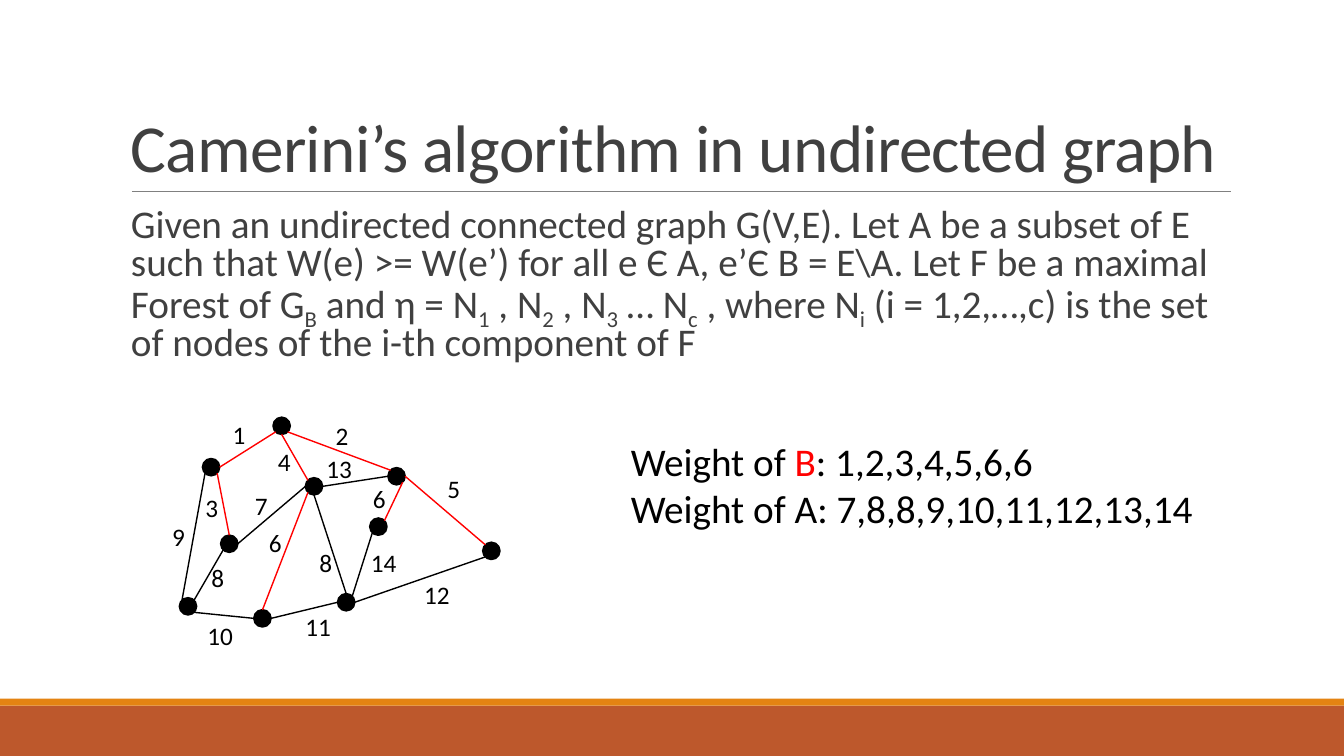
"""Build a slide on Camerini's algorithm with a weighted undirected graph."""
from math import cos, radians, sin

from lxml.etree import SubElement
from pptx import Presentation
from pptx.dml.color import RGBColor
from pptx.enum.shapes import MSO_CONNECTOR, MSO_SHAPE
from pptx.enum.text import MSO_ANCHOR
from pptx.oxml.ns import qn
from pptx.util import Pt

BLACK = RGBColor(0x00, 0x00, 0x00)
RED = RGBColor(0xFF, 0x00, 0x00)
DARK = RGBColor(0x40, 0x40, 0x40)
GRAY = RGBColor(0x80, 0x80, 0x80)
ORANGE = RGBColor(0xE4, 0x83, 0x12)
RUST = RGBColor(0xBD, 0x58, 0x2C)
FONT = "Calibri"

TITLE = "Camerini’s algorithm in undirected graph"
BODY = [
    ("Given an undirected connected graph G(V,E). Let A be a subset of E such that "
     "W(e) >= W(e’) for all e Є A, e’Є B = E\\A. Let F be a maximal Forest of G", "B"),
    (" and η = N", "1"),
    (" , N", "2"),
    (" , N", "3"),
    (" … N", "c"),
    (" , where N", "i"),
    (" (i = 1,2,…,c) is the set of nodes of the i-th component of F", ""),
]
WEIGHTS = [
    [("Weight of ", BLACK), ("B", RED), (": 1,2,3,4,5,6,6", BLACK)],
    [("Weight of A: 7,8,8,9,10,11,12,13,14", BLACK)],
]

NODE_SIZE = 12.2
NODES = {
    "a": (144.7, 327.6), "b": (195.1, 298.1), "c": (218.2, 341.3),
    "d": (157.7, 382.3), "e": (264.2, 370.1), "f": (181.4, 435.6),
    "g": (277.2, 334.1), "h": (128.2, 427), "i": (241.2, 424.1),
    "j": (344.9, 387.4),
}
ANGLES = {"E": 0, "SE": 45, "S": 90, "SW": 135, "W": 180, "NW": 225, "N": 270, "NE": 315}
EDGES = [
    ("b", "SW", "a", "E", RED, "1", (159.1, 295.9)),
    ("b", "S", "c", "NW", RED, "4", (191.5, 315.4)),
    ("b", "SE", "g", "NW", RED, "2", (232.6, 296.6)),
    ("g", "SE", "e", "NE", RED, "6", (259.2, 342)),
    ("g", "E", "j", "NW", RED, "5", (312.5, 334.8)),
    ("c", "S", "i", "N", BLACK, "8", (221, 387.4)),
    ("a", "SE", "d", "N", RED, "3", (139.7, 347.8)),
    ("c", "SW", "f", "N", RED, "6", (185, 373)),
    ("d", "SW", "h", "NE", BLACK, "8", (144, 398.2)),
    ("d", "E", "c", "W", BLACK, "7", (175, 347)),
    ("h", "SE", "f", "W", BLACK, "10", (141.1, 439.2)),
    ("c", "E", "g", "W", BLACK, "13", (226.1, 320.4)),
    ("a", "SW", "h", "NW", BLACK, "9", (115.9, 368.6)),
    ("i", "E", "j", "SW", BLACK, "12", (295.9, 410.4)),
    ("e", "SW", "i", "NE", BLACK, "14", (257.8, 387.4)),
    ("f", "E", "i", "W", BLACK, "11", (211, 433.4)),
]


def add_filled(s, kind, box, color):
    sp = s.shapes.add_shape(kind, *map(Pt, box))
    sp.shadow.inherit = False
    sp.fill.solid()
    sp.fill.fore_color.rgb = color
    sp.line.fill.background()
    return sp


def add_line(s, start, end, color, width):
    line = s.shapes.add_connector(MSO_CONNECTOR.STRAIGHT, *map(Pt, (*start, *end)))
    line.line.color.rgb = color
    line.line.width = Pt(width)
    SubElement(line._element.spPr, qn("a:effectLst"))


def add_text(s, box, wrap=False):
    tf = s.shapes.add_textbox(*map(Pt, box)).text_frame
    tf.word_wrap = wrap
    return tf


def add_run(p, text, size, color):
    r = p.add_run()
    r.text = text
    r.font.name = FONT
    r.font.size = Pt(size)
    r.font.color.rgb = color
    return r


def site(node, side):
    angle = radians(ANGLES[side])
    radius = NODE_SIZE / 2
    left, top = NODES[node]
    return left + radius * (1 + cos(angle)), top + radius * (1 + sin(angle))


def add_title(s):
    tf = add_text(s, (86.4, 22.3, 792, 114.5), True)
    tf.vertical_anchor = MSO_ANCHOR.BOTTOM
    p = tf.paragraphs[0]
    p.line_spacing = 0.85
    add_run(p, TITLE, 48, DARK).font._element.set("spc", "-50")


def add_body(s):
    tf = add_text(s, (86.4, 145.4, 792, 124.6), True)
    tf.margin_left = tf.margin_right = 0
    p = tf.paragraphs[0]
    p.line_spacing = 0.8
    p.space_before, p.space_after = Pt(12), Pt(2)
    pPr = p._p.get_or_add_pPr()
    pPr.set("marL", str(Pt(7.2)))
    pPr.set("indent", str(-Pt(7.2)))
    SubElement(SubElement(pPr, qn("a:buClr")), qn("a:srgbClr"), val=str(ORANGE))
    SubElement(pPr, qn("a:buFont"), typeface=FONT)
    SubElement(pPr, qn("a:buChar"), char=" ")
    for text, subscript in BODY:
        add_run(p, text, 28, DARK)
        if subscript:
            add_run(p, subscript, 28, DARK).font._element.set("baseline", "-25000")


def add_graph(s):
    for position in NODES.values():
        sp = add_filled(s, MSO_SHAPE.OVAL, (*position, NODE_SIZE, NODE_SIZE), BLACK)
        sp.line.color.rgb = BLACK
        sp.line.width = Pt(1.25)
    for start, start_side, end, end_side, color, weight, position in EDGES:
        add_line(s, site(start, start_side), site(end, end_side), color, 1)
        tf = add_text(s, (*position, 14.4 + 9.3 * len(weight), 29.1))
        add_run(tf.paragraphs[0], weight, 18, BLACK)


def add_weights(s):
    tf = add_text(s, (443.5, 308.9, 420.5, 74.9))
    for index, runs in enumerate(WEIGHTS):
        p = tf.add_paragraph() if index else tf.paragraphs[0]
        for text, color in runs:
            add_run(p, text, 28, color)


def main():
    prs = Presentation()
    prs.slide_width, prs.slide_height = Pt(960), Pt(540)
    s = prs.slides.add_slide(prs.slide_layouts[6])
    add_filled(s, MSO_SHAPE.RECTANGLE, (0, 504, 960, 36), RUST)
    add_filled(s, MSO_SHAPE.RECTANGLE, (0, 499, 960, 5), ORANGE)
    add_line(s, (94.3, 136.8), (879.1, 136.8), GRAY, 0.5)
    add_title(s)
    add_body(s)
    add_graph(s)
    add_weights(s)
    prs.save("out.pptx")


if __name__ == "__main__":
    main()
